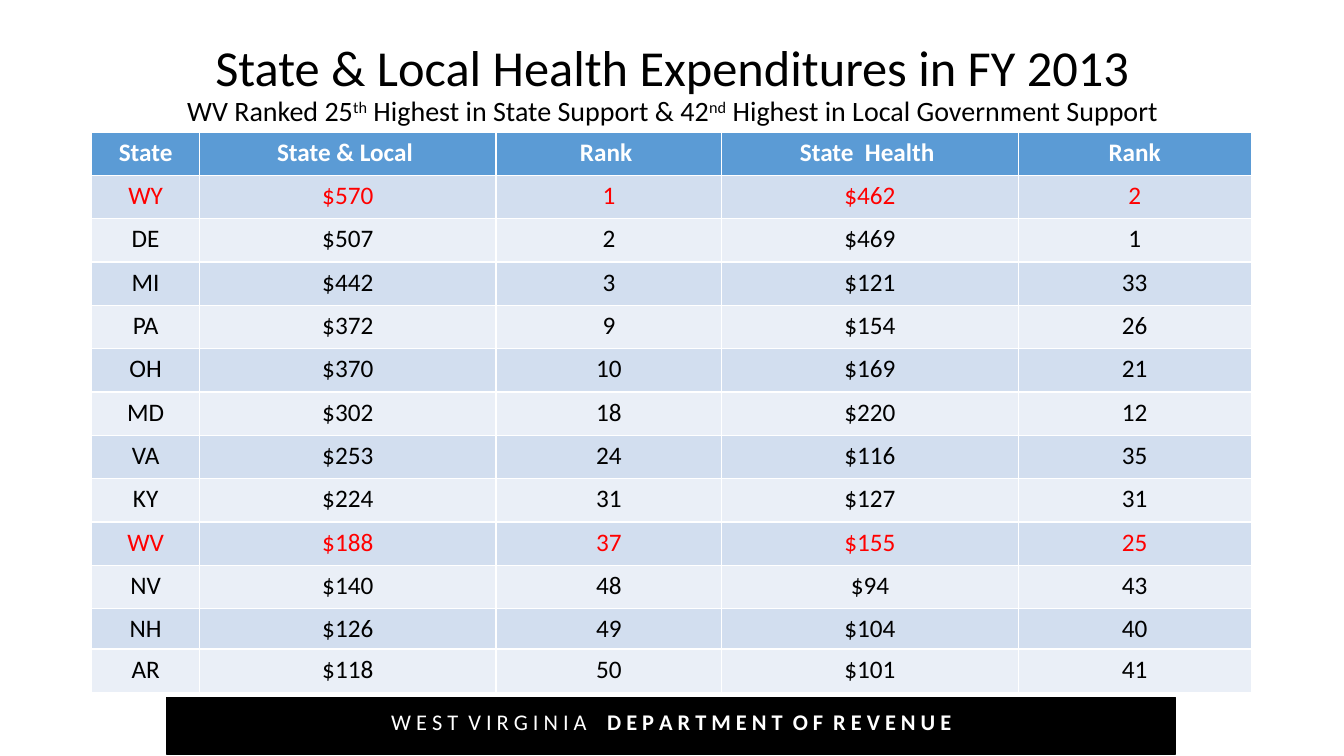
"""Build the slide on state and local health expenditures in FY 2013."""
from pptx import Presentation
from pptx.dml.color import RGBColor
from pptx.enum.shapes import MSO_SHAPE
from pptx.enum.text import MSO_ANCHOR, PP_ALIGN
from pptx.util import Inches, Pt

CENTER = PP_ALIGN.CENTER
MIDDLE = MSO_ANCHOR.MIDDLE
RECTANGLE = MSO_SHAPE.RECTANGLE
BLACK = RGBColor(0x00, 0x00, 0x00)
WHITE = RGBColor(0xFF, 0xFF, 0xFF)
RED = RGBColor(0xFF, 0x00, 0x00)
HEADER_BLUE = RGBColor(0x5B, 0x9B, 0xD5)
BAND_DARK = RGBColor(0xD2, 0xDE, 0xEF)
BAND_LIGHT = RGBColor(0xEA, 0xEF, 0xF7)

COLUMN_WIDTHS = [1.07, 2.94, 2.24, 2.94, 2.31]
ROW_HEIGHT = 0.43
HIGHLIGHTED = ("WY", "WV")
ROWS = [
    ("State", "State & Local ", "Rank ", "State  Health ", "Rank"),
    ("WY", "$570", "1", "$462", "2"),
    ("DE", "$507", "2", "$469", "1"),
    ("MI", "$442", "3", "$121", "33"),
    ("PA", "$372", "9", "$154", "26"),
    ("OH", "$370", "10", "$169", "21"),
    ("MD", "$302", "18", "$220", "12"),
    ("VA", "$253", "24", "$116", "35"),
    ("KY", "$224", "31", "$127", "31"),
    ("WV", "$188", "37", "$155", "25"),
    ("NV", "$140", "48", "$94", "43"),
    ("NH", "$126", "49", "$104", "40"),
    ("AR", "$118", "50", "$101", "41"),
]
SUBTITLE = [
    ("WV Ranked 25", False),
    ("th", True),
    (" Highest in State Support & 42", False),
    ("nd", True),
    (" Highest in Local Government Support", False),
]
FOOTER = [
    ("W E S T  V I R G I N I A    ", False),
    ("D E P A R T M E N T  O F  R E V E N U E", True),
]


def style_run(r, size, color, bold=False):
    r.font.name = "Calibri"
    r.font.size = Pt(size)
    r.font.color.rgb = color
    r.font.bold = bold


def add_text_box(s, left, top, width, height):
    tf = s.shapes.add_textbox(Inches(left), Inches(top), Inches(width), Inches(height)).text_frame
    tf.word_wrap = True
    tf.paragraphs[0].alignment = CENTER
    return tf


prs = Presentation()
prs.slide_width = Inches(13.33)
prs.slide_height = Inches(7.5)
s = prs.slides.add_slide(prs.slide_layouts[6])

title = add_text_box(s, 0.92, 0.21, 11.5, 1.27)
title.vertical_anchor = MIDDLE
p = title.paragraphs[0]
p.line_spacing = 0.9
r = p.add_run()
r.text = "State & Local Health Expenditures in FY 2013"
style_run(r, 36, BLACK)
p.add_line_break()
for text, raised in SUBTITLE:
    r = p.add_run()
    r.text = text
    style_run(r, 20, BLACK)
    if raised:
        r.font._element.set("baseline", "30000")

table = s.shapes.add_table(
    len(ROWS), len(COLUMN_WIDTHS), Inches(0.91), Inches(1.31),
    Inches(sum(COLUMN_WIDTHS)), Inches(ROW_HEIGHT * len(ROWS)),
).table
for column, width in zip(table.columns, COLUMN_WIDTHS):
    column.width = Inches(width)
for i, values in enumerate(ROWS):
    table.rows[i].height = Inches(0.19 if values[0] == "NH" else ROW_HEIGHT)
    if i == 0:
        fill, color = HEADER_BLUE, WHITE
    else:
        fill = BAND_DARK if i % 2 else BAND_LIGHT
        color = RED if values[0] in HIGHLIGHTED else BLACK
    for j, value in enumerate(values):
        cell = table.cell(i, j)
        cell.fill.solid()
        cell.fill.fore_color.rgb = fill
        p = cell.text_frame.paragraphs[0]
        p.text = value
        p.alignment = CENTER
        style_run(p.runs[0], 18, color, bold=i == 0)

bar = s.shapes.add_shape(RECTANGLE, Inches(1.65), Inches(6.92), Inches(10.01), Inches(0.56))
bar.shadow.inherit = False
bar.fill.solid()
bar.fill.fore_color.rgb = BLACK
bar.line.color.rgb = BLACK
bar.line.width = Pt(1)

footer = add_text_box(s, 1.66, 6.98, 10, 0.64)
for text, bold in FOOTER:
    r = footer.paragraphs[0].add_run()
    r.text = text
    style_run(r, 16, WHITE, bold)

prs.save("out.pptx")
